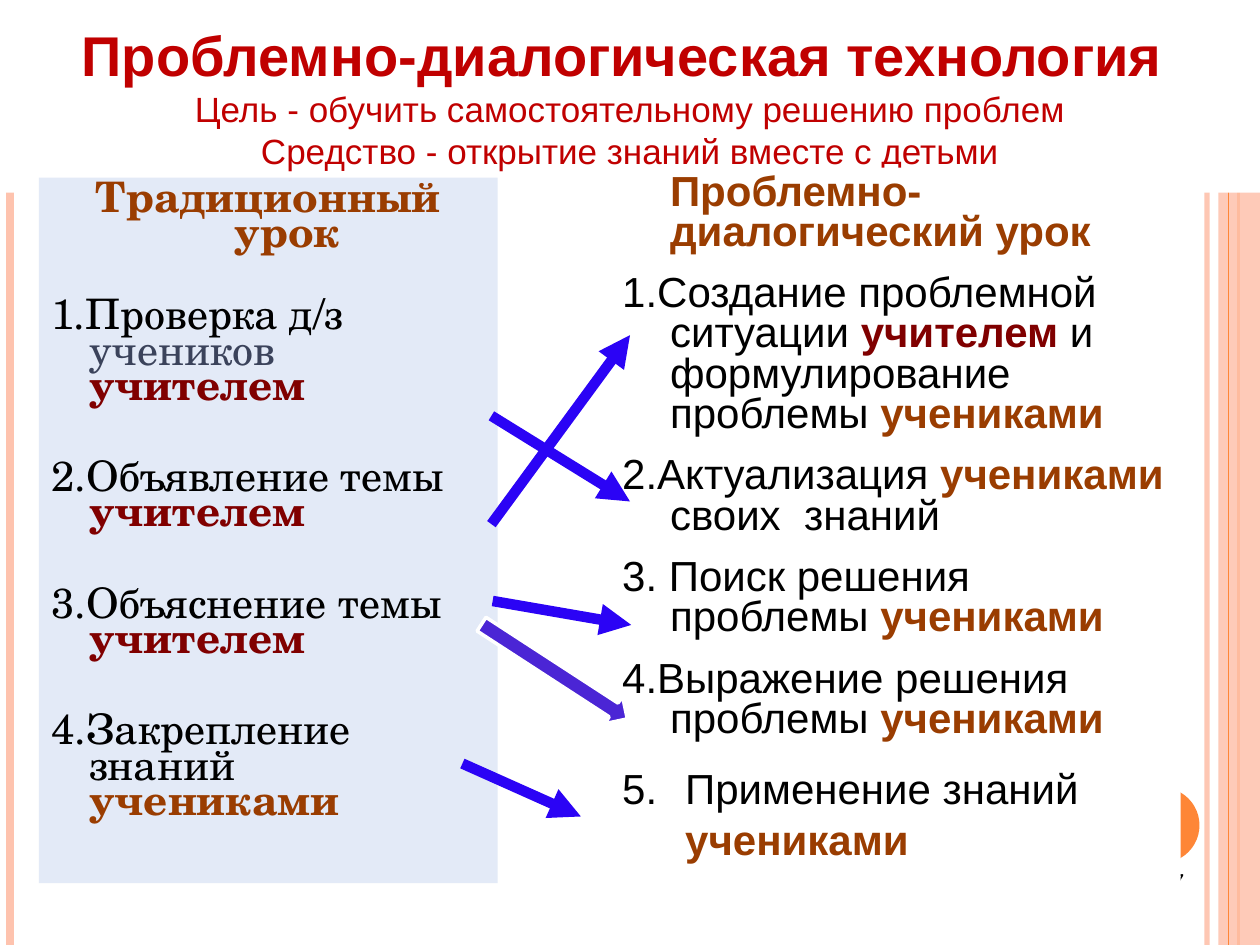
"""Build a slide that compares a traditional lesson with a problem-dialogue lesson."""
from dataclasses import dataclass
from typing import NamedTuple, Optional

from pptx import Presentation
from pptx import util as u
from pptx.dml.color import RGBColor
from pptx.enum import shapes, text
from pptx.oxml import xmlchemy
from pptx.oxml.ns import qn
from lxml import etree

COLS, ROWS = 100, 75


@dataclass(frozen=True)
class Theme:
    white: str = "FFFFFF"
    black: str = "000000"
    peach: str = "FEC3AE"
    orange: str = "FE8637"
    red: str = "C00000"
    panel: str = "E3EAF7"
    brown: str = "9A3D01"
    maroon: str = "800000"
    slate: str = "3B435B"
    blue: str = "2B03F5"
    violet: str = "4B25D5"
    sans: str = "Arial"
    serif: str = "TeX Gyre Schola"
    title: int = 32
    body: int = 24
    goal: int = 20
    number: int = 14


T = Theme()


class Box(NamedTuple):
    col: float
    row: float
    cols: float
    rows: float


class Run(NamedTuple):
    text: str
    color: str = T.black
    bold: bool = False
    size: int = T.body


@dataclass(frozen=True)
class Para:
    runs: tuple
    before: float = 0
    spacing: float = 1
    margin: float = 0
    indent: float = 0
    align: str = "LEFT"
    start: Optional[int] = None


class Line(NamedTuple):
    start: tuple
    end: tuple
    color: str
    width: float
    alpha: int = 100
    arrow: bool = False


def grid(n: float) -> int:
    """Turn grid columns or rows into a length."""
    return u.Inches(n * 10 / COLS)


def assign(target, values: dict) -> None:
    """Set each named attribute of the target."""
    for name, value in values.items():
        setattr(target, name, value)


def set_alpha(element, percent: int) -> None:
    """Make the solid colour inside the element partly transparent."""
    color = next(element.iter(qn("a:srgbClr")))
    etree.SubElement(color, qn("a:alpha")).set("val", str(percent * 1000))


def draw_shape(s, kind, box: Box, fill: str, alpha: int = 100):
    """Draw a filled preset shape without outline or shadow."""
    sp = s.shapes.add_shape(kind, *map(grid, box))
    sp.shadow.inherit = False
    sp.fill.solid()
    sp.fill.fore_color.rgb = RGBColor.from_string(fill)
    sp.line.fill.background()
    if alpha < 100:
        set_alpha(sp.element.spPr, alpha)
    return sp


def draw_line(s, line: Line) -> None:
    """Draw a straight line, with an arrowhead if wanted."""
    cx = s.shapes.add_connector(shapes.MSO_CONNECTOR.STRAIGHT,
                                *map(grid, line.start + line.end))
    cx.line.width = u.Pt(line.width)
    cx.line.color.rgb = RGBColor.from_string(line.color)
    spPr = cx._element.spPr
    if line.alpha < 100:
        set_alpha(spPr, line.alpha)
    if line.arrow:
        etree.SubElement(spPr.find(qn("a:ln")), qn("a:tailEnd")).set("type", "triangle")
    etree.SubElement(spPr, qn("a:effectLst"))


def write(sp, paras: list, font: str, anchor: str = "TOP") -> None:
    """Fill a shape with formatted paragraphs."""
    tf = sp.text_frame
    assign(tf, dict(word_wrap=True, vertical_anchor=text.MSO_ANCHOR[anchor]))
    for i, para in enumerate(paras):
        p = tf.add_paragraph() if i else tf.paragraphs[0]
        assign(p, dict(alignment=text.PP_ALIGN[para.align],
                       line_spacing=para.spacing, space_before=u.Pt(para.before)))
        pPr = p._p.get_or_add_pPr()
        pPr.set("marL", str(grid(para.margin)))
        pPr.set("indent", str(grid(para.indent)))
        if para.start:
            number = etree.SubElement(pPr, qn("a:buAutoNum"))
            number.set("type", "arabicPeriod")
            number.set("startAt", str(para.start))
        for run in para.runs:
            r = p.add_run()
            r.text = run.text
            assign(r.font, dict(name=font, size=u.Pt(run.size), bold=run.bold))
            r.font.color.rgb = RGBColor.from_string(run.color)


def old_step(label: str, *actors: Run) -> Para:
    """Describe one step of the traditional lesson."""
    before = 27 if label.startswith("1") else 32
    return Para((Run(label), *actors), before, 0.7, 3, -3)


def new_step(*runs: Run) -> Para:
    """Describe one step of the problem-dialogue lesson."""
    return Para(runs, 12, 0.8, 3.8, -3.8)


TEACHER = Run("учителем", T.maroon, True)
PUPILS = Run("учениками", T.brown, True)

TITLE = [
    Para((Run("Проблемно-диалогическая технология ", T.red, True, T.title),), align="CENTER"),
    *(Para((Run(goal, T.red, size=T.goal),), align="CENTER") for goal in (
        "Цель - обучить самостоятельному решению проблем",
        "Средство - открытие знаний вместе с детьми")),
]
OLD_LESSON = [
    Para((Run("Традиционный урок", T.brown, True),), 6, 0.7, 3, -3, "CENTER"),
    old_step("1.Проверка д/з ", Run("учеников ", T.slate), TEACHER),
    old_step("2.Объявление темы ", TEACHER),
    old_step("3.Объяснение темы ", TEACHER),
    old_step("4.Закрепление знаний ", PUPILS),
]
NEW_LESSON = [
    Para((Run("Проблемно-диалогический урок", T.brown, True),), 5, 0.8, 3.8),
    new_step(Run("1.Создание проблемной ситуации "), TEACHER,
             Run(" и формулирование  проблемы "), PUPILS),
    new_step(Run("2.Актуализация "), PUPILS, Run(" своих  знаний")),
    new_step(Run("3. Поиск решения проблемы "), PUPILS),
    new_step(Run("4.Выражение решения проблемы "), PUPILS),
    Para((Run("Применение знаний "), PUPILS), 12, 1, 5, -5, start=5),
]
ARROWS = [
    ((39, 41.6), (50, 26.6)),
    ((36.7, 60.6), (46.1, 64.8)),
    ((39.1, 47.7), (50.1, 49.6)),
    ((39, 33), (50, 39.8)),
]


def rule(col: float, color: str, width: float, alpha: int = 100) -> Line:
    """Describe a vertical line over the full slide height."""
    return Line((col, 0), (col, ROWS), color, width, alpha)


def main() -> None:
    """Build and save the slide."""
    prs = Presentation()
    assign(prs, dict(slide_width=grid(COLS), slide_height=grid(ROWS)))
    s = prs.slides.add_slide(prs.slide_layouts[6])
    rect = shapes.MSO_SHAPE.RECTANGLE

    for line in (rule(95.8, T.peach, 3, 93), rule(0.8, T.peach, 4.5), rule(98.3, T.orange, 1.5)):
        draw_line(s, line)
    draw_shape(s, rect, Box(96.7, 0, 3.3, ROWS), T.peach, 87)
    draw_line(s, rule(97.5, T.orange, 0.75))
    draw_shape(s, shapes.MSO_SHAPE.OVAL, Box(89.2, 62.5, 6, 6), T.orange)

    write(draw_shape(s, rect, Box(0, 0, COLS, 15.3), T.white), TITLE, T.sans, "MIDDLE")
    number = s.shapes.add_textbox(*map(grid, Box(71.7, 68.3, 23.3, 5.2)))
    write(number, [Para((Run("17", size=T.number),), align="RIGHT")], T.sans)
    write(draw_shape(s, rect, Box(3.1, 14.1, 36.4, 56), T.panel), OLD_LESSON, T.serif)
    write(draw_shape(s, rect, Box(48.4, 13.3, 45.3, 57.8), T.white), NEW_LESSON, T.sans)

    for start, end in ARROWS:
        draw_line(s, Line(start, end, T.blue, 6, arrow=True))
    sp = draw_shape(s, shapes.MSO_SHAPE.RIGHT_ARROW, Box(37.1, 52, 13.8, 2.6), T.violet)
    sp.rotation = 33
    sp.line.color.rgb = RGBColor.from_string(T.white)
    sp.line.width = u.Pt(2)

    prs.save("out.pptx")


if __name__ == "__main__":
    main()
